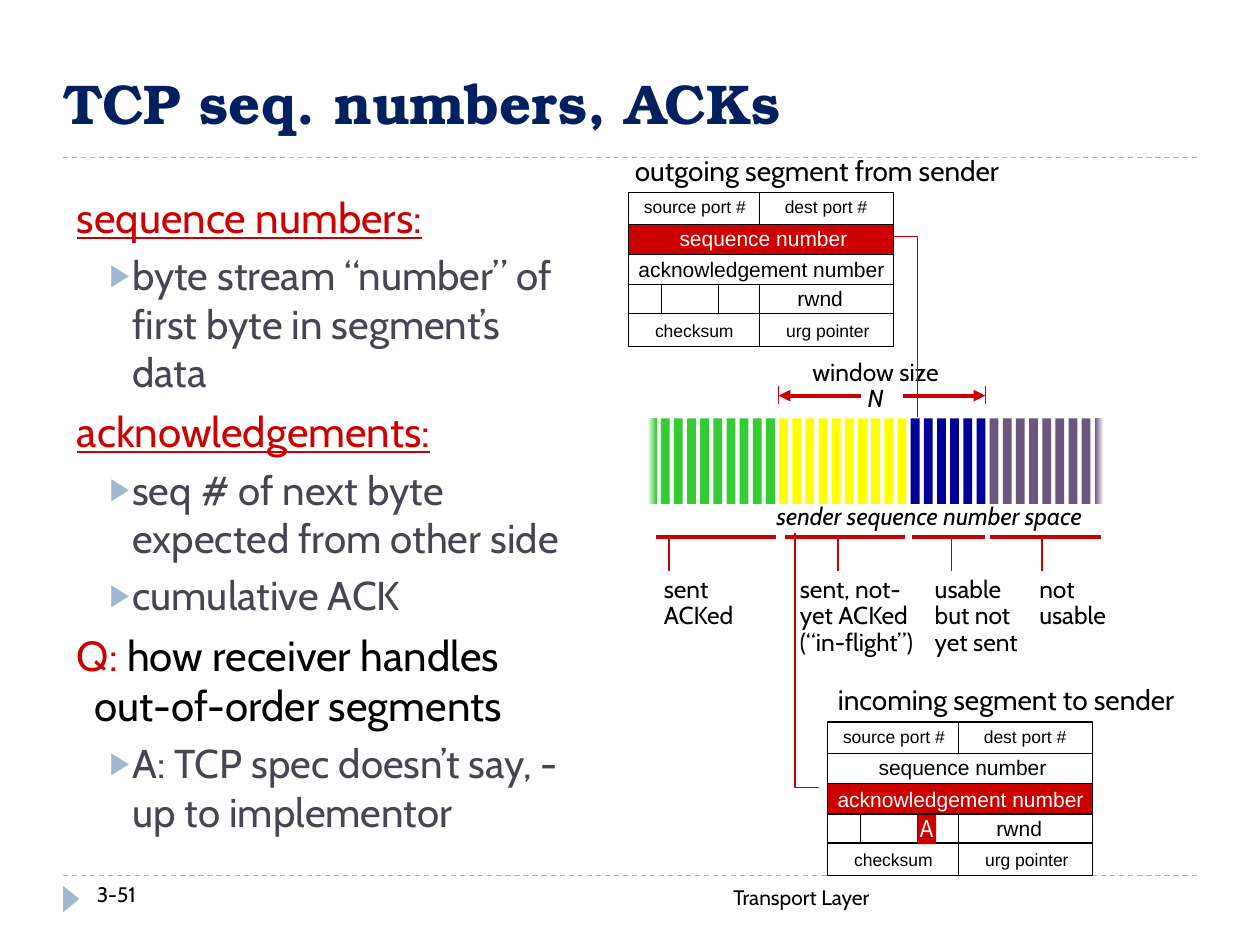
from lxml import etree
from pptx import Presentation
from pptx.dml.color import RGBColor
from pptx.enum.dml import MSO_LINE
from pptx.enum.shapes import MSO_CONNECTOR, MSO_SHAPE
from pptx.enum.text import MSO_ANCHOR, MSO_AUTO_SIZE, PP_ALIGN
from pptx.oxml.ns import qn
from pptx.util import Inches, Pt

STRAIGHT = MSO_CONNECTOR.STRAIGHT
RECTANGLE, TRIANGLE = MSO_SHAPE.RECTANGLE, MSO_SHAPE.ISOSCELES_TRIANGLE
LEFT, CENTER, RIGHT = PP_ALIGN.LEFT, PP_ALIGN.CENTER, PP_ALIGN.RIGHT
BOTTOM, NO_AUTOFIT = MSO_ANCHOR.BOTTOM, MSO_AUTO_SIZE.NONE
DASH = MSO_LINE.DASH

BLACK = RGBColor(0x00, 0x00, 0x00)
WHITE = RGBColor(0xFF, 0xFF, 0xFF)
RED = RGBColor(0xCC, 0x00, 0x00)
NAVY = RGBColor(0x00, 0x20, 0x60)
SLATE = RGBColor(0x46, 0x46, 0x53)
PALE_BLUE = RGBColor(0x9F, 0xB8, 0xCD)
GREEN = RGBColor(0x33, 0xCC, 0x33)
YELLOW = RGBColor(0xFF, 0xFF, 0x00)
BLUE = RGBColor(0x00, 0x00, 0x99)
PURPLE = RGBColor(0x6B, 0x56, 0x80)

# level, [(text, colour, underlined)]
OUTLINE = [
    (0, [("sequence numbers:", RED, True)]),
    (1, [("byte stream “number” of first byte in segment’s data", SLATE, False)]),
    (0, [("acknowledgements:", RED, True)]),
    (1, [("seq # of next byte expected from other side", SLATE, False)]),
    (1, [("cumulative ACK", SLATE, False)]),
    (0, [("Q:", RED, False), (" how receiver handles out-of-order segments", BLACK, False)]),
    (1, [("A: TCP spec doesn’t say, - up to implementor", SLATE, False)]),
]
# bar colour and count, in sequence order
BAR_GROUPS = [(GREEN, 10), (YELLOW, 10), (BLUE, 6), (PURPLE, 9)]
# range start, range end, tick, label left, label width, label
RANGES = [
    (5.21, 6.16, 5.31, 5.17, 0.9, "sent\nACKed"),
    (6.23, 7.18, 6.65, 6.25, 1.17, "sent, not-yet ACKed\n(“in-flight”)"),
    (7.24, 7.82, 7.55, 7.32, 1.17, "usable\nbut not\nyet sent"),
    (7.86, 8.74, 8.27, 8.15, 0.9, "not\nusable"),
]


class SlideBuilder:
    """Holds the fonts and the slide being drawn; lengths are in inches."""

    heading_font = "TeX Gyre Bonum"
    text_font = "Cabin"
    header_font = "Arial"

    def __init__(self, slide):
        self.slide = slide

    def style(self, run, size, font, color, italic=False):
        run.font.size, run.font.name = Pt(size), font
        run.font.color.rgb, run.font.italic = color, italic

    def place(self, shape, left, top, width, height):
        shape.left, shape.top = Inches(left), Inches(top)
        shape.width, shape.height = Inches(width), Inches(height)

    def title(self, wording):
        title = self.slide.shapes.title
        self.place(title, 0.4, 0.16, 8.5, 0.97)
        frame = title.text_frame
        frame.text = wording
        frame.auto_size = NO_AUTOFIT
        frame.vertical_anchor = BOTTOM
        frame.paragraphs[0].alignment = LEFT
        run = frame.paragraphs[0].runs[0]
        self.style(run, 32, self.heading_font, NAVY)
        run.font.bold = True

    def bullet(self, paragraph, level):
        margin, indent = ((0.26, -0.14), (0.56, -0.18))[level]
        props = paragraph._p.get_or_add_pPr()
        props.set("marL", str(Inches(margin)))
        props.set("indent", str(Inches(indent)))
        if level == 0:
            etree.SubElement(props, qn("a:buNone"))
            return
        color = etree.SubElement(props, qn("a:buClr"))
        etree.SubElement(color, qn("a:srgbClr"), val=str(PALE_BLUE))
        etree.SubElement(props, qn("a:buSzPct"), val="76000")
        etree.SubElement(props, qn("a:buChar"), char="▶")

    def outline(self, items):
        body = self.slide.placeholders[1]
        self.place(body, 0.39, 1.47, 4.3, 5.08)
        frame = body.text_frame
        frame.auto_size = NO_AUTOFIT
        for index, (level, parts) in enumerate(items):
            paragraph = frame.add_paragraph() if index else frame.paragraphs[0]
            paragraph.level = level
            paragraph.space_before = Pt((6, 5)[level] if index else 0)
            self.bullet(paragraph, level)
            for wording, color, underlined in parts:
                run = paragraph.add_run()
                run.text = wording
                self.style(run, (24, 23)[level], self.text_font, color)
                run.font.underline = underlined

    def text(self, wording, at, size, font=None, color=BLACK, align=CENTER,
             spacing=None, italic=False, wrap=False):
        box = self.slide.shapes.add_textbox(*map(Inches, at))
        frame = box.text_frame
        frame.text = wording
        frame.word_wrap = wrap
        for paragraph in frame.paragraphs:
            paragraph.alignment = align
            paragraph.line_spacing = spacing
            for run in paragraph.runs:
                self.style(run, size, font or self.text_font, color, italic)
        return frame

    def shape(self, kind, at, fill=None, border=None):
        shape = self.slide.shapes.add_shape(kind, *map(Inches, at))
        shape.shadow.inherit = False
        if fill is None:
            shape.fill.background()
        else:
            shape.fill.solid()
            shape.fill.fore_color.rgb = fill
        if border is None:
            shape.line.fill.background()
        else:
            shape.line.color.rgb, shape.line.width = border, Pt(0.75)
        return shape

    def fade(self, bar, start, end):
        bar.fill.gradient()
        bar.fill.gradient_angle = 0
        for stop, color, position in zip(bar.fill.gradient_stops, (start, end), (0, 1)):
            stop.color.rgb, stop.position = color, position

    def line(self, x1, y1, x2, y2, color=BLACK, width=0.75, dash=None, arrow=False):
        line = self.slide.shapes.add_connector(STRAIGHT, *map(Inches, (x1, y1, x2, y2)))
        line.line.color.rgb, line.line.width = color, Pt(width)
        if dash is not None:
            line.line.dash_style = dash
        if arrow:
            etree.SubElement(line.line._get_or_add_ln(), qn("a:tailEnd"), type="triangle")
        etree.SubElement(line._element.spPr, qn("a:effectLst"))

    def elbow(self, start, *corners):
        builder = self.slide.shapes.build_freeform(*map(Inches, start), scale=1.0)
        builder.add_line_segments([tuple(map(Inches, c)) for c in corners], close=False)
        path = builder.convert_to_shape()
        path.shadow.inherit = False
        path.fill.background()
        path.line.color.rgb, path.line.width = RED, Pt(0.75)

    def segment(self, left, top, marked_row):
        """Draw a TCP header with row 1 (sequence) or 2 (acknowledgement) in red."""
        right, bottom, middle = left + 2.1, top + 1.22, left + 1.04
        rows = [top + offset for offset in (0.25, 0.49, 0.73, 0.96)]
        self.shape(RECTANGLE, (left, rows[marked_row - 1], 2.1, 0.24), RED)
        self.shape(RECTANGLE, (left, top, 2.1, 1.22), border=BLACK)
        for y in rows:
            self.line(left, y, right, y)
        for x, y1, y2 in ((middle, top, rows[0]), (middle, rows[2], bottom),
                          (left + 0.26, rows[2], rows[3]), (left + 0.71, rows[2], rows[3])):
            self.line(x, y1, x, y2)
        fields = [("source port #", 0.01, -0.02, 1.03, 10),
                  ("dest port #", 1.06, -0.02, 1.01, 10),
                  ("sequence number", 0.28, 0.21, 1.58, 12),
                  ("acknowledgement number", -0.03, 0.46, 2.17, 12),
                  ("rwnd", 1.19, 0.69, 0.66, 12),
                  ("checksum", 0.06, 0.96, 0.92, 10),
                  ("urg pointer", 1.1, 0.96, 0.96, 10)]
        marked_field = fields[marked_row + 1][0]
        for name, dx, dy, width, size in fields:
            color = WHITE if name == marked_field else BLACK
            self.text(name, (left + dx, top + dy, width, 0.3 if size == 12 else 0.27),
                      size, self.header_font, color)

    def sequence_space(self, left, pitch):
        colors = [color for color, count in BAR_GROUPS for _ in range(count)]
        bars = [self.shape(RECTANGLE, (left + i * pitch, 3.32, 0.07, 0.68), color)
                for i, color in enumerate(colors)]
        self.fade(bars[0], WHITE, colors[0])
        self.fade(bars[-1], colors[-1], WHITE)
        for start, end, tick, label_left, width, label in RANGES:
            self.line(start, 4.26, end, 4.26, RED, 2.25)
            self.line(tick, 4.28, tick, 4.53, RED)
            self.text(label, (label_left, 4.53, width, 0.73), 14,
                      align=LEFT, spacing=0.9, wrap=True)
        caption = self.text("sender sequence number space", (5.41, 3.93, 3.48, 0.33),
                            14, italic=True)
        caption.margin_left = Inches(0.55)

    def window(self):
        frame = self.text("window size\nN", (6.33, 2.81, 1.24, 0.52), 14, spacing=0.9)
        frame.paragraphs[1].runs[0].font.italic = True
        for inner, outer in ((6.83, 6.18), (7.17, 7.82)):
            self.line(inner, 3.14, outer, 3.14, RED, 2.25, arrow=True)
            self.line(outer, 3.06, outer, 3.21, RED)


def main():
    prs = Presentation()
    prs.slide_width, prs.slide_height = Inches(10), Inches(7.5)
    page = SlideBuilder(prs.slides.add_slide(prs.slide_layouts[1]))

    for rule_y in (1.25, 6.95):
        page.line(0.5, rule_y, 9.5, rule_y, PALE_BLUE, dash=DASH)
    page.shape(TRIANGLE, (0.46, 7.07, 0.21, 0.13), PALE_BLUE).rotation = 90
    page.text("Transport Layer", (3.17, 6.97, 3.83, 0.4), 12, align=RIGHT, wrap=True)
    page.text("3-51", (0.67, 6.95, 2.17, 0.4), 12, align=LEFT, wrap=True)
    page.title("TCP seq. numbers, ACKs")
    page.outline(OUTLINE)

    page.segment(6.57, 5.73, marked_row=2)
    page.text("incoming segment to sender", (6.49, 5.37, 2.99, 0.37), 16)
    page.elbow((6.5, 6.25), (6.31, 6.25), (6.31, 4.23))
    page.shape(RECTANGLE, (7.28, 6.47, 0.15, 0.23), RED)
    page.text("A", (7.16, 6.4, 0.39, 0.33), 14, "Arial Narrow", WHITE)

    page.sequence_space(5.14, 3.55 / 34)
    page.window()

    page.segment(4.99, 1.53, marked_row=1)
    page.text("outgoing segment from sender", (4.87, 1.17, 3.23, 0.37), 16)
    page.elbow((7.09, 1.88), (7.28, 1.88), (7.28, 3.31))

    prs.save("out.pptx")


if __name__ == "__main__":
    main()
